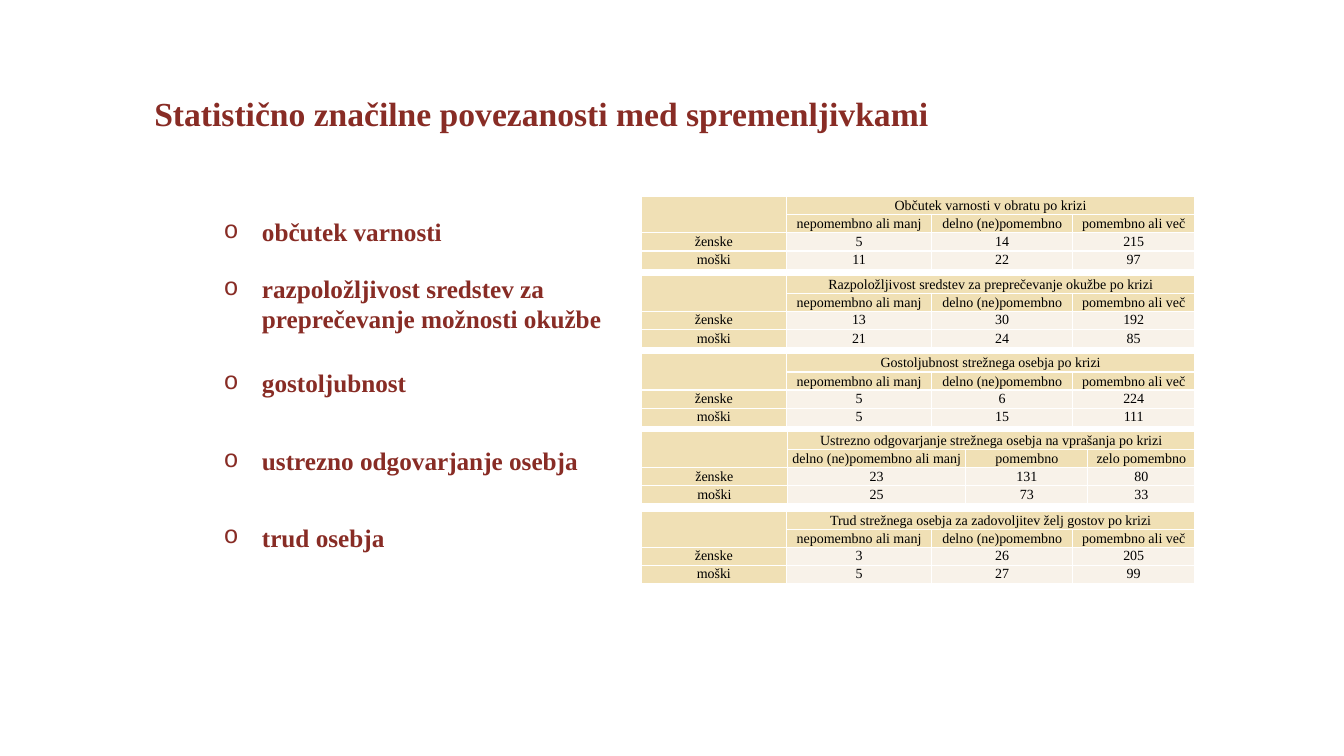
from dataclasses import dataclass

from lxml import etree
from pptx import Presentation
from pptx.dml.color import RGBColor
from pptx.enum.text import MSO_ANCHOR as Anchor, PP_ALIGN as Align
from pptx.oxml.ns import qn
from pptx.util import Inches, Pt


@dataclass(frozen=True)
class Theme:
    font: str = "Times New Roman"
    bullet_font: str = "Courier New"
    accent: str = "882C25"
    ink: str = "000000"
    header: str = "F0E0B5"
    body: str = "F8F2E9"
    border: str = "FFFFFF"
    title_size: int = 24
    list_size: int = 18
    table_size: int = 10


THEME = Theme()


def style_runs(paragraph, size, color, bold=False):
    for run in paragraph.runs:
        run.font.name = THEME.font
        run.font.size = Pt(size)
        run.font.bold = bold
        run.font.color.rgb = RGBColor.from_string(color)


def add_borders(cell):
    """Draw a 1 pt line on all four sides; call before filling the cell."""
    cell_props = cell._tc.get_or_add_tcPr()
    for side in ("lnL", "lnR", "lnT", "lnB"):
        line = etree.SubElement(cell_props, qn(f"a:{side}"), w=str(Pt(1)))
        fill = etree.SubElement(line, qn("a:solidFill"))
        etree.SubElement(fill, qn("a:srgbClr"), val=THEME.border)


prs = Presentation()
prs.slide_width, prs.slide_height = Inches(13.33), Inches(7.5)
slide = prs.slides.add_slide(prs.slide_layouts[5])

# Title
title = slide.shapes.title
title.left, title.top = Inches(1.43), Inches(0.87)
title.width, title.height = Inches(8.13), Inches(0.5)
title.text_frame.text = "Statistično značilne povezanosti med spremenljivkami"
title.text_frame.vertical_anchor = Anchor.TOP
heading = title.text_frame.paragraphs[0]
heading.alignment = Align.LEFT
style_runs(heading, THEME.title_size, THEME.accent, bold=True)

# Variables, each with the space before it in points
variables = [
    ("občutek varnosti", 0),
    ("razpoložljivost sredstev za preprečevanje možnosti okužbe", 19),
    ("gostoljubnost", 24),
    ("ustrezno odgovarjanje osebja", 34),
    ("trud osebja", 33),
]
variable_list = slide.shapes.add_textbox(
    Inches(1.62), Inches(1.8), Inches(4.67), Inches(3.77)).text_frame
variable_list.word_wrap = True
variable_list.margin_top = Inches(0.35)
variable_list.text = "\n".join(name for name, _ in variables)
for paragraph, (_, space) in zip(variable_list.paragraphs, variables):
    props = paragraph._p.get_or_add_pPr()
    props.set("marL", str(Inches(0.88)))
    props.set("indent", str(Inches(-0.38)))
    etree.SubElement(props, qn("a:buFont"), typeface=THEME.bullet_font)
    etree.SubElement(props, qn("a:buChar"), char="o")
    if space:
        paragraph.space_before = Pt(space)
    style_runs(paragraph, THEME.list_size, THEME.accent, bold=True)

# Cross tables: top, heading, answers, column widths, women, men
answers = ["nepomembno ali manj", "delno (ne)pomembno", "pomembno ali več"]
staff_answers = ["delno (ne)pomembno ali manj", "pomembno", "zelo pomembno"]
widths = [1.44, 1.44, 1.4, 1.21]
cross_tables = [
    (1.95, "Občutek varnosti v obratu po krizi",
     answers, widths, [5, 14, 215], [11, 22, 97]),
    (2.73, "Razpoložljivost sredstev za preprečevanje okužbe po krizi",
     answers, widths, [13, 30, 192], [21, 24, 85]),
    (3.51, "Gostoljubnost strežnega osebja po krizi",
     answers, widths, [5, 6, 224], [5, 15, 111]),
    (4.28, "Ustrezno odgovarjanje strežnega osebja na vprašanja po krizi",
     staff_answers, [1.45, 1.77, 1.21, 1.06], [23, 131, 80], [25, 73, 33]),
    (5.07, "Trud strežnega osebja za zadovoljitev želj gostov po krizi",
     answers, widths, [3, 26, 205], [5, 27, 99]),
]
for top, question, options, column_widths, women, men in cross_tables:
    table = slide.shapes.add_table(
        4, 4, Inches(6.36), Inches(top), Inches(5.49), Inches(0.72)).table
    table.first_row = table.horz_banding = False
    for column, width in zip(table.columns, column_widths):
        column.width = Inches(width)
    rows = [["", question, "", ""], ["", *options],
            ["ženske", *women], ["moški", *men]]
    for r, row in enumerate(rows):
        in_head = r < 2
        for c, value in enumerate(row):
            cell = table.cell(r, c)
            cell.margin_left = cell.margin_right = cell.margin_top = 0
            # Room for descenders above the line below the headings
            cell.margin_bottom = Inches(0.01) if in_head else 0
            cell.vertical_anchor = Anchor.BOTTOM if in_head else Anchor.TOP
            add_borders(cell)
            cell.fill.solid()
            cell.fill.fore_color.rgb = RGBColor.from_string(
                THEME.header if in_head or c == 0 else THEME.body)
            cell.text_frame.text = str(value)
            paragraph = cell.text_frame.paragraphs[0]
            paragraph.alignment = Align.CENTER
            paragraph.line_spacing = 1.0 if in_head else 1.07
            style_runs(paragraph, THEME.table_size, THEME.ink)
            if value == "":  # keeps empty cells from stretching their row
                etree.SubElement(paragraph._p, qn("a:endParaRPr"),
                                 sz=str(THEME.table_size * 100))
    table.cell(0, 0).merge(table.cell(1, 0))
    table.cell(0, 1).merge(table.cell(0, 3))

prs.save("out.pptx")
